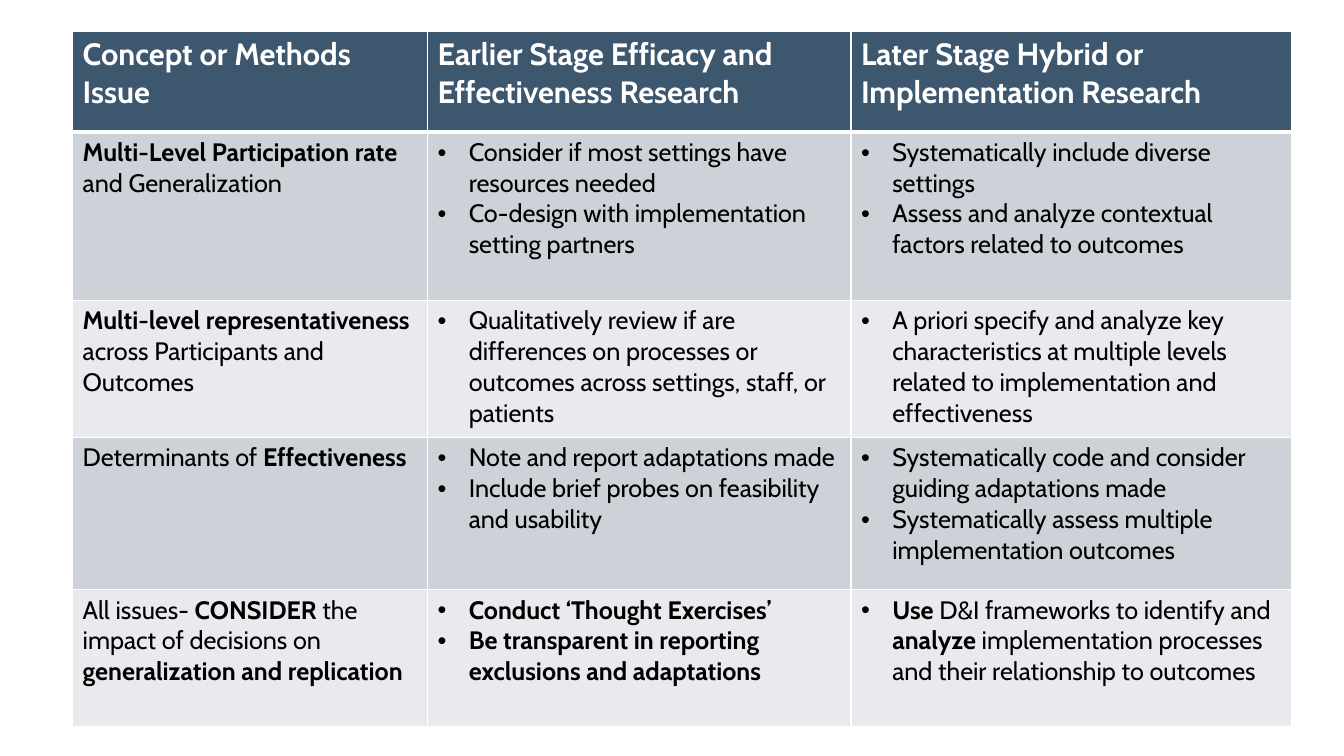
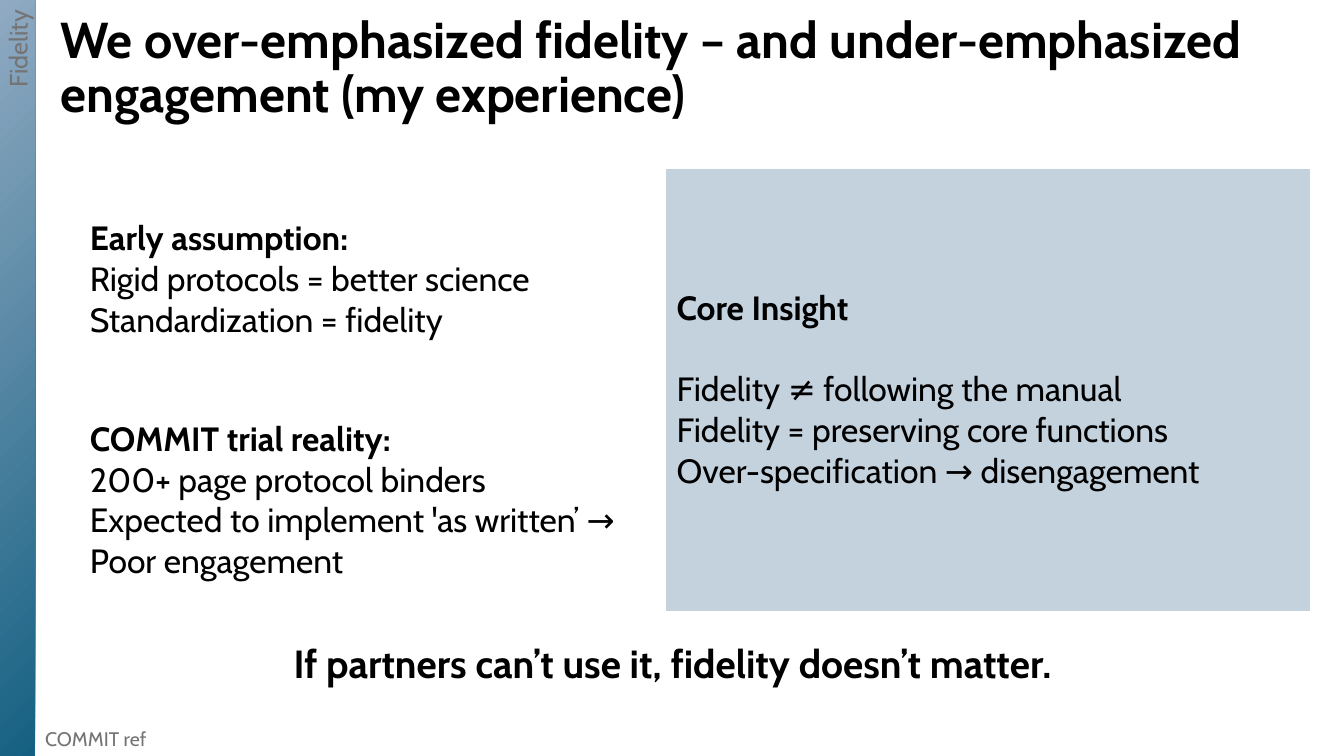
from dataclasses import dataclass

from lxml import etree
from pptx import Presentation
from pptx.dml.color import RGBColor
from pptx.enum.shapes import MSO_SHAPE as SHAPE
from pptx.enum.text import MSO_ANCHOR as ANCHOR, MSO_AUTO_SIZE as AUTO, PP_ALIGN as ALIGN
from pptx.oxml.ns import qn
from pptx.util import Inches, Pt

FONT = "Cabin"
COLORS = {
    "text": "000000", "white": "FFFFFF", "grey": "747474",
    "header": "3D576F", "dark_row": "CCD2D8", "light_row": "E8EAED",
    "insight": "C4D2DE", "band_top": "90AAC2", "band_end": "156082",
}
NO_STYLE = "{2D5ABB26-0587-4C30-8999-92F81FD0307C}"
BULLET_INDENT = Inches(0.31)


@dataclass
class Box:
    left: float
    top: float
    width: float
    height: float

    def emu(self) -> tuple:
        return tuple(Inches(v) for v in (self.left, self.top, self.width, self.height))


@dataclass
class Issue:
    name: str
    earlier: list[str]
    later: list[str]
    height: float


HEADINGS = ["Concept or Methods Issue",
            "Earlier Stage Efficacy and Effectiveness Research",
            "Later Stage Hybrid or Implementation Research"]
ISSUES = [
    Issue("**Multi-Level Participation rate** and Generalization",
          ["Consider if most settings have resources needed",
           "Co-design with implementation setting partners"],
          ["Systematically include diverse settings",
           "Assess and analyze contextual factors related to outcomes"], 1.67),
    Issue("**Multi-level representativeness** across Participants and Outcomes",
          ["Qualitatively review if are differences on processes or outcomes "
           "across settings, staff, or patients"],
          ["A priori specify and analyze key characteristics at multiple levels "
           "related to implementation and effectiveness"], 1.36),
    Issue("Determinants of **Effectiveness**",
          ["Note and report adaptations made",
           "Include brief probes on feasibility and usability"],
          ["Systematically code and consider guiding adaptations made",
           "Systematically assess multiple implementation outcomes"], 1.51),
    Issue("All issues- **CONSIDER** the impact of decisions on **generalization and replication**",
          ["**Conduct ‘Thought Exercises’**",
           "**Be transparent in reporting exclusions and adaptations**"],
          ["**Use** D&I frameworks to identify and **analyze** implementation "
           "processes and their relationship to outcomes"], 1.36),
]


def rgb(name: str) -> RGBColor:
    return RGBColor.from_string(COLORS[name])


def add_bullet(p) -> None:
    pPr = p._p.get_or_add_pPr()
    pPr.set("marL", str(BULLET_INDENT))
    pPr.set("indent", str(-BULLET_INDENT))
    etree.SubElement(pPr, qn("a:buFont")).set("typeface", "Arial")
    etree.SubElement(pPr, qn("a:buChar")).set("char", "•")


def write(tf, paras: list[str], *, size: float, color: str = "text", align=ALIGN.LEFT,
          bullets: bool = False, spacing: float | None = None) -> None:
    """Fill a text frame; **double stars** mark bold words."""
    for i, text in enumerate(paras):
        p = tf.add_paragraph() if i else tf.paragraphs[0]
        p.alignment = align
        if spacing:
            p.line_spacing = spacing
        if bullets:
            add_bullet(p)
        for j, part in enumerate(text.split("**")):
            if part:
                r = p.add_run()
                r.text = part
                r.font.name, r.font.size, r.font.bold = FONT, Pt(size), j % 2 == 1
                r.font.color.rgb = rgb(color)


def add_text(s, box: Box, text: str, *, anchor=ANCHOR.TOP, grow: bool = False, **fmt) -> None:
    tf = s.shapes.add_textbox(*box.emu()).text_frame
    tf.word_wrap = True
    tf.vertical_anchor = anchor
    tf.auto_size = AUTO.SHAPE_TO_FIT_TEXT if grow else AUTO.NONE
    write(tf, [text], **fmt)


def add_grid(s, left: float, top: float, cols: list[float], rows: list[float]):
    box = Box(left, top, sum(cols), sum(rows))
    tbl = s.shapes.add_table(len(rows), len(cols), *box.emu()).table
    tbl.first_row = tbl.horz_banding = False
    tbl._tbl.tblPr.find(qn("a:tableStyleId")).text = NO_STYLE
    for col, width in zip(tbl.columns, cols):
        col.width = Inches(width)
    for row, height in zip(tbl.rows, rows):
        row.height = Inches(height)
    return tbl


def set_borders(cell, top: float, bottom: float) -> None:
    tcPr = cell._tc.get_or_add_tcPr()
    for side, width in zip("LRTB", (1, 1, top, bottom)):
        ln = etree.SubElement(tcPr, qn(f"a:ln{side}"), w=str(Pt(width)))
        fill = etree.SubElement(ln, qn("a:solidFill"))
        etree.SubElement(fill, qn("a:srgbClr")).set("val", COLORS["white"])


def fill_cell(cell, paras: list[str], fill: str | None = None, **fmt) -> None:
    if fill:
        cell.fill.solid()
        cell.fill.fore_color.rgb = rgb(fill)
    else:
        cell.fill.background()
    write(cell.text_frame, paras, **fmt)


def add_side_band(s, label: str) -> None:
    sp = s.shapes.add_shape(SHAPE.RECTANGLE, *Box(0, 0, 0.35, 7.5).emu())
    sp.shadow.inherit = False
    sp.line.fill.background()
    sp.fill.gradient()
    for stop, color in zip(sp.fill.gradient_stops, ("band_top", "band_end")):
        stop.color.rgb = rgb(color)
    # Radial gradient centred on the top left corner
    grad = sp._element.spPr.find(qn("a:gradFill"))
    lin = grad.find(qn("a:lin"))
    radial = etree.Element(qn("a:path"))
    radial.set("path", "circle")
    etree.SubElement(radial, qn("a:fillToRect"), r="100000", b="100000")
    grad.replace(lin, radial)
    tf = sp.text_frame
    tf.vertical_anchor = ANCHOR.MIDDLE
    tf._txBody.bodyPr.set("vert", "vert270")
    write(tf, [label], size=18, color="grey", align=ALIGN.RIGHT)


def build_issues(s) -> None:
    tbl = add_grid(s, 0.72, 0.31, [3.52, 4.2, 4.37], [1] + [i.height for i in ISSUES])
    # Header row
    for c, heading in enumerate(HEADINGS):
        cell = tbl.cell(0, c)
        set_borders(cell, 1, 3)
        fill_cell(cell, [f"**{heading}**"], "header", size=22, color="white")
    # Banded body rows
    for n, issue in enumerate(ISSUES, 1):
        for c, paras in enumerate(([issue.name], issue.earlier, issue.later)):
            cell = tbl.cell(n, c)
            set_borders(cell, 3 if n == 1 else 1, 1)
            fill_cell(cell, paras, "dark_row" if n % 2 else "light_row",
                      size=18, bullets=c > 0)


def build_fidelity(s) -> None:
    add_text(s, Box(0.5, 0.13, 12.51, 1.11),
             "**We over-emphasized fidelity – and under-emphasized engagement (my experience)**",
             size=36, anchor=ANCHOR.MIDDLE, spacing=0.9)
    add_side_band(s, "Fidelity")
    add_text(s, Box(0.35, 7.16, 11.84, 0.34), "COMMIT ref", size=14, color="grey", grow=True)

    # Assumption and reality on the left, insight across both rows
    tbl = add_grid(s, 0.79, 1.68, [5.82, 6.38], [2.19, 2.19])
    insight = tbl.cell(0, 1)
    insight.merge(tbl.cell(1, 1))
    fill_cell(tbl.cell(0, 0), ["**Early assumption:**", "Rigid protocols = better science",
                               "Standardization = fidelity"], size=24)
    fill_cell(tbl.cell(1, 0), ["**COMMIT trial reality:**", "200+ page protocol binders",
                               "Expected to implement 'as written’ → Poor engagement"], size=24)
    fill_cell(insight, ["**Core Insight**", "Fidelity ≠ following the manual",
                        "Fidelity = preserving core functions",
                        "Over-specification → disengagement"], "insight", size=24)
    insight.text_frame.paragraphs[0].space_after = Pt(29)
    for cell in (tbl.cell(0, 0), tbl.cell(1, 0), insight):
        cell.vertical_anchor = ANCHOR.MIDDLE

    # Closing message
    add_text(s, Box(2.37, 6.29, 8.6, 0.57),
             "**If partners can’t use it, fidelity doesn’t matter.**",
             size=28, align=ALIGN.CENTER, grow=True)


def main() -> None:
    prs = Presentation()
    prs.slide_width, prs.slide_height = Inches(13.33), Inches(7.5)
    for build in (build_issues, build_fidelity):
        build(prs.slides.add_slide(prs.slide_layouts[6]))
    prs.save("out.pptx")


if __name__ == "__main__":
    main()
